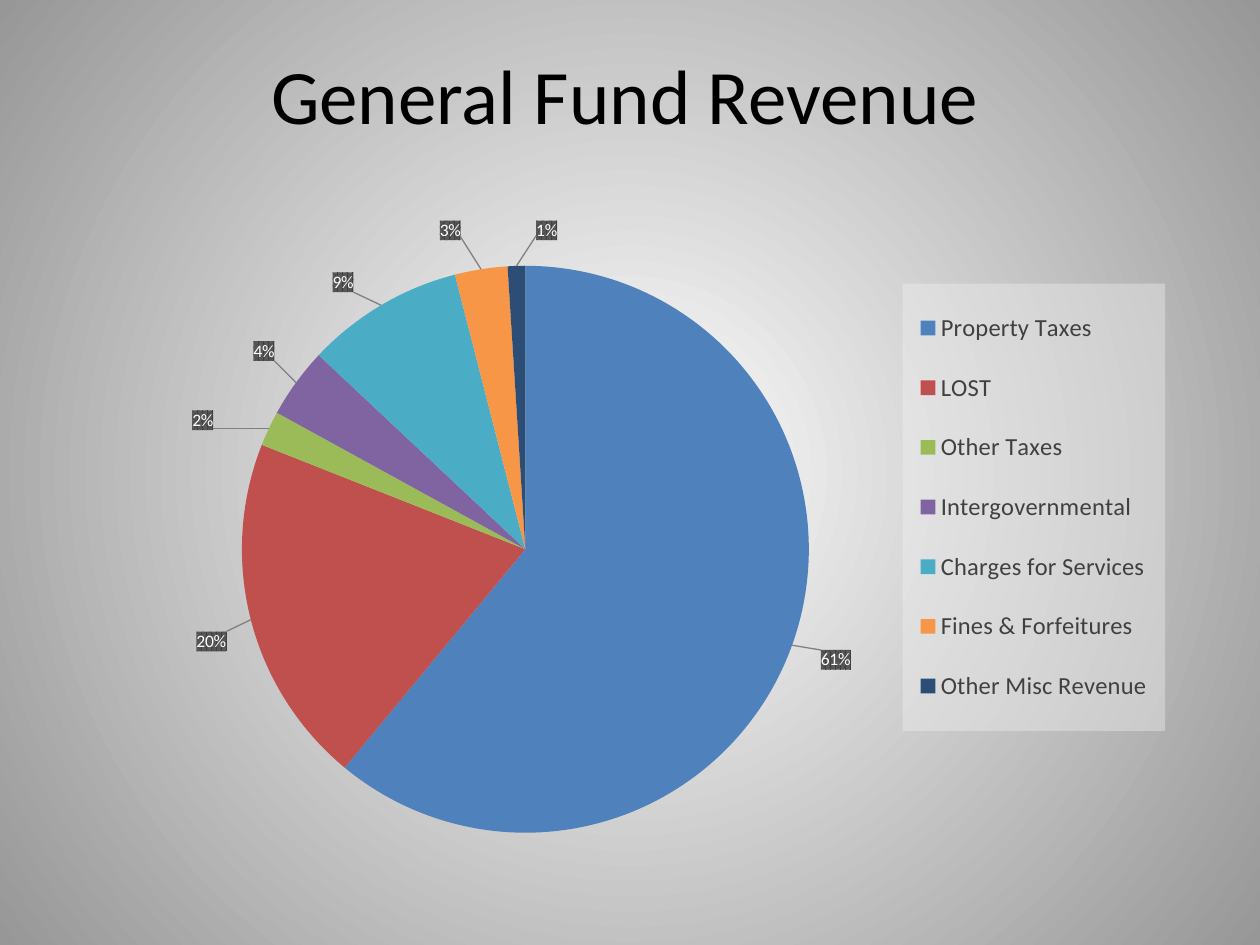
from math import copysign, cos, pi, sin
from lxml import etree
from pptx import Presentation
from pptx.chart.data import CategoryChartData
from pptx.dml.color import RGBColor
from pptx.dml.fill import FillFormat
from pptx.dml.line import LineFormat
from pptx.enum import chart as charts, dml, text
from pptx.oxml.ns import qn
from pptx.oxml.xmlchemy import OxmlElement
from pptx.util import Inches, Pt

BLACK = RGBColor(0x00, 0x00, 0x00)
WHITE = RGBColor(0xFF, 0xFF, 0xFF)
EDGE_GRAY = RGBColor(0x97, 0x97, 0x97)
LEADER_GRAY = RGBColor(0x80, 0x80, 0x80)
LABEL_DARK = RGBColor(0x40, 0x40, 0x40)
LABEL_LIGHT = RGBColor(0x59, 0x59, 0x59)
LEGEND_FILL = RGBColor(0xF2, 0xF2, 0xF2)
LEGEND_TEXT = RGBColor(0x40, 0x40, 0x40)
BLUE = RGBColor(0x4F, 0x81, 0xBD)
RED = RGBColor(0xC0, 0x50, 0x4D)
GREEN = RGBColor(0x9B, 0xBB, 0x59)
PURPLE = RGBColor(0x80, 0x64, 0xA2)
TEAL = RGBColor(0x4B, 0xAC, 0xC6)
ORANGE = RGBColor(0xF7, 0x96, 0x46)
NAVY = RGBColor(0x2C, 0x4D, 0x75)
FONT = "Calibri"

REVENUES = [
    ("Property Taxes", 61, BLUE, (6.58, 5.22)),
    ("LOST", 20, RED, (1.73, 5.08)),
    ("Other Taxes", 2, GREEN, (1.66, 3.36)),
    ("Intergovernmental", 4, PURPLE, (2.14, 2.82)),
    ("Charges for Services", 9, TEAL, (2.75, 2.29)),
    ("Fines & Forfeitures", 3, ORANGE, (3.58, 1.86)),
    ("Other Misc Revenue", 1, NAVY, (4.34, 1.85)),
]
CHART_LEFT, CHART_TOP, CHART_WIDTH, CHART_HEIGHT = 1, 1.75, 8.33, 5
CENTER_X, CENTER_Y, RADIUS = 4.17, 4.36, 2.25


def add_text(slide, words, left, top, width, height, size, color, align):
    shape = slide.shapes.add_textbox(Inches(left), Inches(top), Inches(width), Inches(height))
    frame = shape.text_frame
    frame.word_wrap = True
    frame.auto_size = text.MSO_AUTO_SIZE.SHAPE_TO_FIT_TEXT
    paragraph = frame.paragraphs[0]
    paragraph.alignment = align
    run = paragraph.add_run()
    run.text = words
    run.font.name = FONT
    run.font.size = Pt(size)
    run.font.color.rgb = color


def make_layout(**settings):
    layout = OxmlElement("c:layout")
    manual = etree.SubElement(layout, qn("c:manualLayout"))
    for name, value in settings.items():
        etree.SubElement(manual, qn(f"c:{name}")).set("val", str(value))
    return layout


presentation = Presentation()
presentation.slide_width = Inches(10)
presentation.slide_height = Inches(7.5)
slide = presentation.slides.add_slide(presentation.slide_layouts[6])

background = slide.background.fill
background.gradient()
for stop, position, color in zip(background.gradient_stops, (0, 1), (WHITE, EDGE_GRAY)):
    stop.position = position
    stop.color.rgb = color
linear = slide._element.xpath(".//a:lin")[0]
radial = OxmlElement("a:path")
radial.set("path", "circle")
focus = etree.SubElement(radial, qn("a:fillToRect"))
for side in "ltrb":
    focus.set(side, "50000")
linear.getparent().replace(linear, radial)

data = CategoryChartData(number_format="0")
data.categories = [name for name, *_ in REVENUES]
data.add_series("Series 1", [value for _, value, *_ in REVENUES])
chart = slide.shapes.add_chart(
    charts.XL_CHART_TYPE.PIE, Inches(CHART_LEFT), Inches(CHART_TOP),
    Inches(CHART_WIDTH), Inches(CHART_HEIGHT), data).chart
chart.has_title = False
chart.font.name = FONT
chart.font.size = Pt(10)
chart.font.color.rgb = BLACK
plot = chart.plots[0]
plot.vary_by_categories = True

chart.has_legend = True
legend = chart.legend
legend.position = charts.XL_LEGEND_POSITION.RIGHT
legend.include_in_layout = False
legend.font.name = FONT
legend.font.size = Pt(14)
legend.font.color.rgb = LEGEND_TEXT

plot_area = chart._chartSpace.xpath("c:chart/c:plotArea")[0]
for layout in plot_area.xpath("c:layout") + legend._element.xpath("c:layout"):
    layout.getparent().remove(layout)
plot_area.insert(0, make_layout(
    layoutTarget="inner", xMode="edge", yMode="edge",
    x=(CENTER_X - RADIUS - CHART_LEFT) / CHART_WIDTH,
    y=(CENTER_Y - RADIUS - CHART_TOP) / CHART_HEIGHT,
    w=2 * RADIUS / CHART_WIDTH, h=2 * RADIUS / CHART_HEIGHT))
legend._element.xpath("c:legendPos")[0].addnext(make_layout(
    xMode="edge", yMode="edge", x=0.74, y=0.1, w=0.25, h=0.71))

legend_box = OxmlElement("c:spPr")
legend._element.xpath("c:overlay")[0].addnext(legend_box)
legend_fill = FillFormat.from_fill_parent(legend_box)
legend_fill.solid()
legend_fill.fore_color.rgb = LEGEND_FILL
etree.SubElement(legend_box.xpath(".//a:srgbClr")[0], qn("a:alpha")).set("val", "39000")

series = plot.series[0]
labels = series.data_labels
labels.show_percentage = True
labels.show_value = False
labels.number_format = "0%"
labels.number_format_is_linked = False
labels.position = charts.XL_LABEL_POSITION.OUTSIDE_END
leader_lines = etree.SubElement(labels._element, qn("c:leaderLines"))
leader = LineFormat(etree.SubElement(leader_lines, qn("c:spPr")))
leader.width = Pt(0.75)
leader.color.rgb = LEADER_GRAY

running = 0
for index, (name, value, color, (label_x, label_y)) in enumerate(REVENUES):
    point = series.points[index]
    point.format.fill.solid()
    point.format.fill.fore_color.rgb = color

    label = point.data_label
    label.position = charts.XL_LABEL_POSITION.OUTSIDE_END
    label.font.name = FONT
    label.font.size = Pt(10)
    label.font.bold = False
    label.font.color.rgb = WHITE

    angle = 2 * pi * (running + value / 2) / 100
    running += value
    across, down = sin(angle), -cos(angle)
    label_width = 0.24 if value >= 10 else 0.17
    side = 0 if abs(across) < 0.08 else copysign(1, across)
    default_x = CENTER_X + RADIUS * across + side * label_width / 2
    default_y = CENTER_Y + RADIUS * down + copysign(0.08, down)

    label_xml = labels._element.xpath(f"c:dLbl[c:idx/@val='{index}']")[0]
    label_xml.xpath("c:showVal")[0].set("val", "0")
    label_xml.xpath("c:showPercent")[0].set("val", "1")
    for old_box in label_xml.xpath("c:spPr"):
        label_xml.remove(old_box)
    label_box = OxmlElement("c:spPr")
    label_xml.xpath("c:txPr")[0].addprevious(label_box)
    label_fill = FillFormat.from_fill_parent(label_box)
    label_fill.patterned()
    label_fill.pattern = dml.MSO_PATTERN.PERCENT_75
    label_fill.fore_color.rgb = LABEL_DARK
    label_fill.back_color.rgb = LABEL_LIGHT
    label_xml.xpath("c:idx")[0].addnext(make_layout(
        x=(label_x - default_x) / CHART_WIDTH,
        y=(label_y - default_y) / CHART_HEIGHT))

add_text(slide, "General Fund Revenue", left=1, top=0.33, width=7.92, height=0.84,
         size=44, color=BLACK, align=text.PP_ALIGN.CENTER)

presentation.save("out.pptx")
